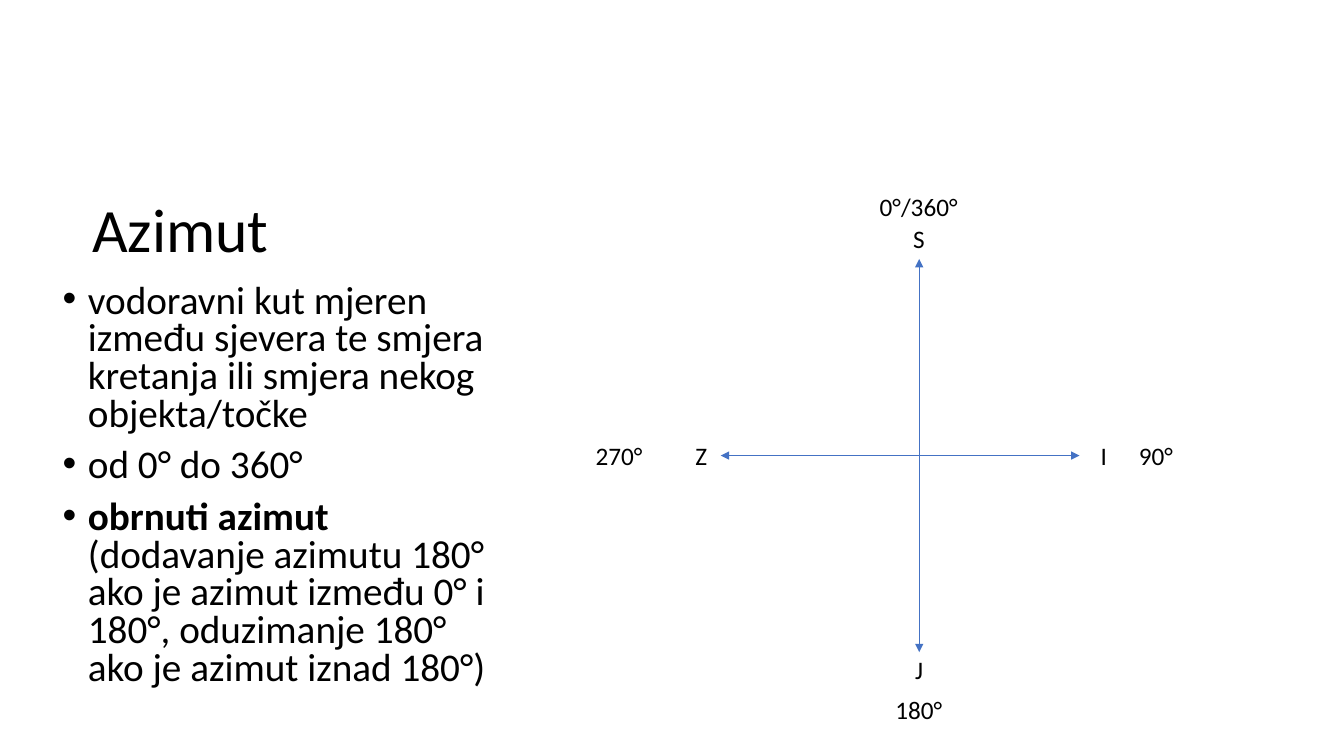
from dataclasses import dataclass

from lxml import etree
from pptx import Presentation
from pptx.dml.color import RGBColor
from pptx.enum import shapes, text
from pptx.oxml import ns
from pptx.util import Pt

BLACK = RGBColor(0x00, 0x00, 0x00)
BLUE = RGBColor(0x44, 0x72, 0xC4)
FONT = "Calibri"
AXIS_X, AXIS_Y = 656.6, 325.4
LABEL_HEIGHT = 29


@dataclass(frozen=True)
class Label:
    wording: str
    center_x: float
    center_y: float
    width: float


@dataclass(frozen=True)
class Arrow:
    x1: float
    y1: float
    x2: float
    y2: float


@dataclass(frozen=True)
class Span:
    wording: str
    bold: bool = False


BULLETS = [
    [Span("vodoravni kut mjeren između sjevera te smjera kretanja "
          "ili smjera nekog objekta/točke")],
    [Span("od 0° do 360°")],
    [Span("obrnuti azimut ", bold=True),
     Span("(dodavanje azimutu 180° ako je azimut između 0° i 180°, "
          "oduzimanje 180° ako je azimut iznad 180°)")],
]
ARROWS = [
    Arrow(514.8, AXIS_Y, 771.1, AXIS_Y),
    Arrow(AXIS_X, 185, AXIS_X, 465.8),
]
LABELS = [
    Label("S", AXIS_X, 170.8, 23),
    Label("0°/360°", AXIS_X, 147.8, 70.6),
    Label("I", 788.8, AXIS_Y, 19.4),
    Label("90°", 825.8, AXIS_Y, 38.9),
    Label("180°", AXIS_X, 507, 48.2),
    Label("270°", 442.4, AXIS_Y, 48.2),
    Label("Z", 501.1, AXIS_Y, 23),
    Label("J", AXIS_X, 478.2, 20.2),
]


def add_span(para, span: Span, size: float) -> None:
    run = para.add_run()
    run.text = span.wording
    run.font.name = FONT
    run.font.size = Pt(size)
    run.font.bold = span.bold
    run.font.color.rgb = BLACK


def clear_insets(frame) -> None:
    frame.margin_left = frame.margin_right = 0
    frame.margin_top = frame.margin_bottom = 0
    frame.word_wrap = True
    frame.auto_size = text.MSO_AUTO_SIZE.NONE
    frame.vertical_anchor = text.MSO_ANCHOR.TOP


def add_bullet(para) -> None:
    """Give the paragraph a hanging bullet, 18 points wide."""
    properties = para._p.get_or_add_pPr()
    properties.set("marL", str(Pt(18)))
    properties.set("indent", str(-Pt(18)))
    font = etree.SubElement(properties, ns.qn("a:buFont"))
    font.set("typeface", "Arial")
    etree.SubElement(properties, ns.qn("a:buChar")).set("char", "•")


def format_title(page) -> None:
    title = page.shapes.title
    title.left, title.top = Pt(66), Pt(142.6)
    title.width, title.height = Pt(828), Pt(60.5)
    clear_insets(title.text_frame)
    para = title.text_frame.paragraphs[0]
    para.alignment = text.PP_ALIGN.LEFT
    para.line_spacing = 0.9
    add_span(para, Span("Azimut"), 44)


def add_bullets(page) -> None:
    box = page.shapes.add_textbox(Pt(44.8), Pt(203), Pt(315.4), Pt(308.9))
    frame = box.text_frame
    clear_insets(frame)
    for index, spans in enumerate(BULLETS):
        para = frame.add_paragraph() if index else frame.paragraphs[0]
        add_bullet(para)
        para.line_spacing = 0.8
        para.space_before = Pt(10 if index else 0)
        for span in spans:
            add_span(para, span, 28)


def add_arrow(page, arrow: Arrow) -> None:
    connector = page.shapes.add_connector(
        shapes.MSO_CONNECTOR.STRAIGHT,
        Pt(arrow.x1), Pt(arrow.y1), Pt(arrow.x2), Pt(arrow.y2))
    connector.line.color.rgb = BLUE
    connector.line.width = Pt(0.5)
    line = connector.line._get_or_add_ln()
    for end in ("a:headEnd", "a:tailEnd"):
        etree.SubElement(line, ns.qn(end)).set("type", "triangle")
    etree.SubElement(connector._element.spPr, ns.qn("a:effectLst"))


def add_label(page, label: Label) -> None:
    box = page.shapes.add_textbox(
        Pt(label.center_x - label.width / 2),
        Pt(label.center_y - LABEL_HEIGHT / 2),
        Pt(label.width), Pt(LABEL_HEIGHT))
    frame = box.text_frame
    frame.word_wrap = False
    frame.auto_size = text.MSO_AUTO_SIZE.SHAPE_TO_FIT_TEXT
    add_span(frame.paragraphs[0], Span(label.wording), 18)


def main() -> None:
    deck = Presentation()
    deck.slide_width, deck.slide_height = Pt(960), Pt(540)
    page = deck.slides.add_slide(deck.slide_layouts.get_by_name("Title Only"))
    format_title(page)
    add_bullets(page)
    for arrow in ARROWS:
        add_arrow(page, arrow)
    for label in LABELS:
        add_label(page, label)
    deck.save("out.pptx")


if __name__ == "__main__":
    main()
